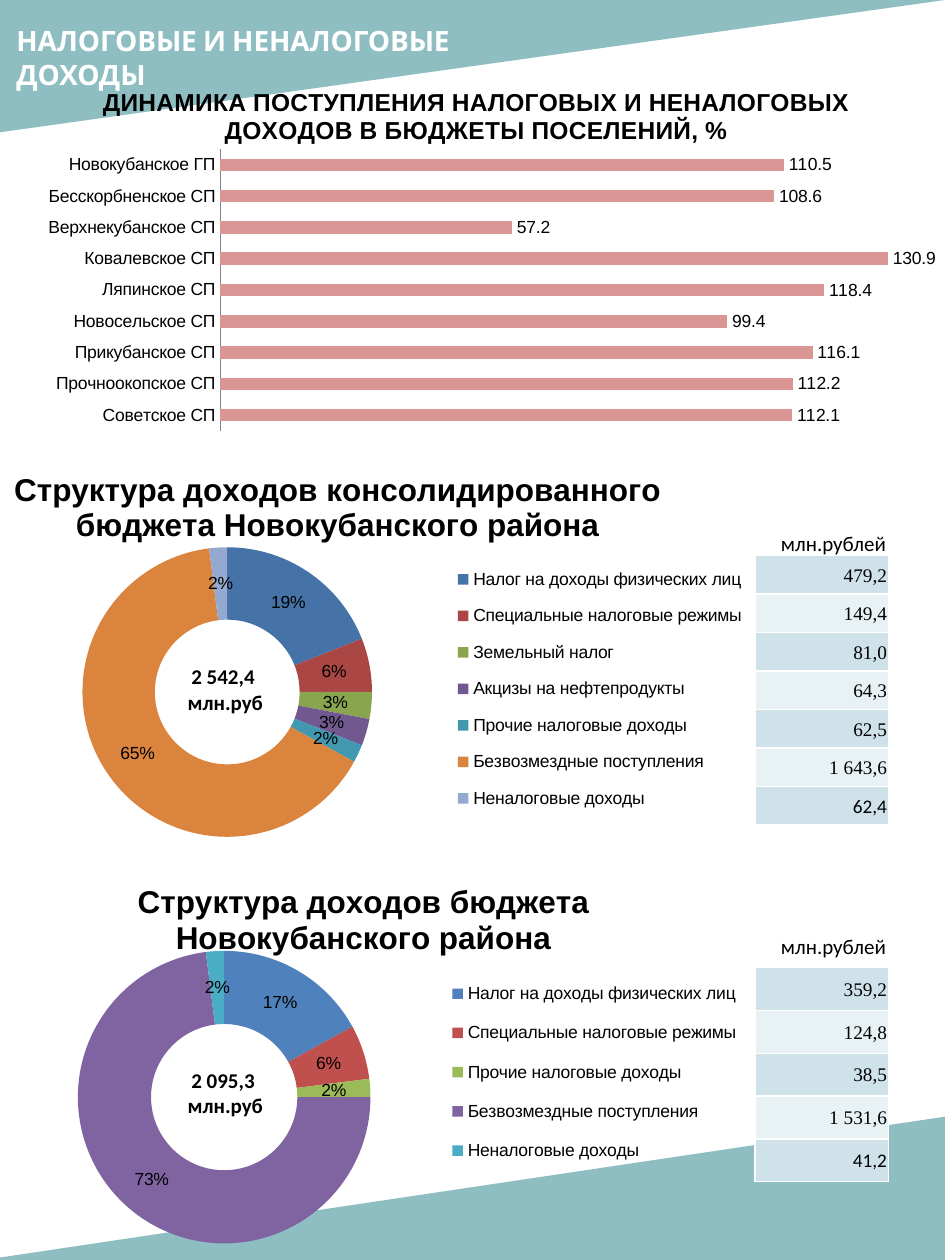
from dataclasses import dataclass

from lxml.etree import SubElement
from pptx import Presentation
from pptx.chart.data import CategoryChartData
from pptx.dml.color import RGBColor
from pptx.enum.chart import XL_CHART_TYPE, XL_LABEL_POSITION, XL_LEGEND_POSITION, XL_TICK_MARK
from pptx.enum.shapes import MSO_SHAPE
from pptx.enum.text import MSO_ANCHOR, MSO_AUTO_SIZE, PP_ALIGN
from pptx.oxml.ns import qn
from pptx.util import Inches, Pt

WIDTH, HEIGHT = Inches(7.5), Inches(10)
COLUMN, ROW = WIDTH / 75, HEIGHT / 100

TEAL = RGBColor(0x51, 0x9A, 0xA0)
WHITE = RGBColor(0xFF, 0xFF, 0xFF)
BLACK = RGBColor(0, 0, 0)
GREY = RGBColor(0x86, 0x86, 0x86)
ROSE = RGBColor(0xD9, 0x96, 0x94)
BANDS = [RGBColor(0xCF, 0xE2, 0xEA), RGBColor(0xE8, 0xF1, 0xF4)]
MUTED = [RGBColor.from_string(code) for code in
         ("4572A7", "AA4643", "89A54E", "71588F", "4198AF", "DB843D", "93A9CF")]
BRIGHT = [RGBColor.from_string(code) for code in
          ("4F81BD", "C0504D", "9BBB59", "8064A2", "4BACC6")]


@dataclass
class Area:
    column: float
    row: float
    columns: float
    rows: float

    def emu(self) -> tuple:
        return (int(self.column * COLUMN), int(self.row * ROW),
                int(self.columns * COLUMN), int(self.rows * ROW))


@dataclass
class Income:
    source: str
    percent: int
    amount: str


@dataclass
class Budget:
    heading: str
    total: str
    incomes: list
    palette: list
    chart: Area
    ring: tuple
    legend: tuple
    total_area: Area
    unit_area: Area
    amounts: Area


SETTLEMENTS = {
    "Новокубанское ГП": 110.5, "Бесскорбненское СП": 108.6, "Верхнекубанское СП": 57.2,
    "Ковалевское СП": 130.9, "Ляпинское СП": 118.4, "Новосельское СП": 99.4,
    "Прикубанское СП": 116.1, "Прочноокопское СП": 112.2, "Советское СП": 112.1,
}

BUDGETS = [
    Budget("Структура доходов консолидированного бюджета Новокубанского района", "2 542,4",
           [Income("Налог на доходы физических лиц", 19, "479,2"),
            Income("Специальные налоговые режимы", 6, "149,4"),
            Income("Земельный налог", 3, "81,0"),
            Income("Акцизы на нефтепродукты", 3, "64,3"),
            Income("Прочие налоговые доходы", 2, "62,5"),
            Income("Безвозмездные поступления", 65, "1 643,6"),
            Income("Неналоговые доходы", 2, "62,4")],
           MUTED, Area(-7.3, 35.6, 68.2, 31.8), (0.203, 0.246, 0.337, 0.724),
           (0.63, 0.26, 0.35, 0.68), Area(13.3, 52.2, 8.8, 5),
           Area(61, 41.6, 12, 3), Area(59.9, 44.1, 10.6, 21.4)),
    Budget("Структура доходов бюджета Новокубанского района", "2 095,3",
           [Income("Налог на доходы физических лиц", 17, "359,2"),
            Income("Специальные налоговые режимы", 6, "124,8"),
            Income("Прочие налоговые доходы", 2, "38,5"),
            Income("Безвозмездные поступления", 73, "1 531,6"),
            Income("Неналоговые доходы", 2, "41,2")],
           BRIGHT, Area(-2.2, 68.3, 62.1, 31.7), (0.135, 0.226, 0.374, 0.733),
           (0.6, 0.26, 0.39, 0.54), Area(13.3, 84.2, 8.8, 5),
           Area(61, 73.6, 12, 3), Area(59.9, 76.8, 10.6, 17)),
]


def style(font, size: float, name: str, color: RGBColor = BLACK, bold: bool = False) -> None:
    font.size, font.name, font.bold = Pt(size), name, bold
    font.color.rgb = color


def draw_corner(slide, area: Area, flip: str) -> None:
    corner = slide.shapes.add_shape(MSO_SHAPE.RIGHT_TRIANGLE, *area.emu())
    corner.rotation = 180
    corner.element.spPr.find(qn("a:xfrm")).set(flip, "1")
    corner.shadow.inherit = False
    corner.fill.solid()
    corner.fill.fore_color.rgb = TEAL
    color = corner.element.spPr.find(qn("a:solidFill"))[0]
    SubElement(color, qn("a:alpha"), val="64000")
    corner.line.fill.background()
    slide.shapes.title.element.addprevious(corner.element)


def draw_text(slide, area: Area, text: str, bold: bool, align: PP_ALIGN) -> None:
    box = slide.shapes.add_textbox(*area.emu())
    box.text_frame.text = text
    box.text_frame.word_wrap = True
    for paragraph in box.text_frame.paragraphs:
        paragraph.alignment = align
        style(paragraph.runs[0].font, 12, "Calibri", bold=bold)


def draw_amounts(slide, area: Area, amounts: list) -> None:
    table = slide.shapes.add_table(len(amounts), 1, *area.emu()).table
    table.first_row = table.horz_banding = False
    for index, amount in enumerate(amounts):
        cell = table.cell(index, 0)
        cell.text = amount
        cell.vertical_anchor = MSO_ANCHOR.MIDDLE
        cell.margin_left = cell.margin_right = cell.margin_top = Inches(0.01)
        cell.margin_bottom = 0
        paragraph = cell.text_frame.paragraphs[0]
        paragraph.alignment = PP_ALIGN.RIGHT
        last = index == len(amounts) - 1
        style(paragraph.runs[0].font, 11, "Calibri" if last else "Times New Roman")
        properties = cell._tc.get_or_add_tcPr()
        for side in ("a:lnL", "a:lnR", "a:lnT", "a:lnB"):
            border = SubElement(properties, qn(side), w=str(Pt(0.96)))
            fill = SubElement(border, qn("a:solidFill"))
            SubElement(fill, qn("a:srgbClr"), val=str(WHITE))
        cell.fill.solid()
        cell.fill.fore_color.rgb = BANDS[index % 2]


def place(parent, shares: tuple, position: int, inner: bool = False) -> None:
    for old in parent.findall(qn("c:layout")):
        parent.remove(old)
    layout = SubElement(parent, qn("c:layout"))
    parent.insert(position, layout)
    manual = SubElement(layout, qn("c:manualLayout"))
    if inner:
        SubElement(manual, qn("c:layoutTarget"), val="inner")
    for mode in ("xMode", "yMode"):
        SubElement(manual, qn("c:" + mode), val="edge")
    for side, share in zip("xywh", shares):
        SubElement(manual, qn("c:" + side), val=str(share))


def draw_chart(slide, kind: XL_CHART_TYPE, area: Area, heading: str, size: float,
               values: dict, ring: tuple, label_format: str):
    data = CategoryChartData()
    data.categories = list(values)
    data.add_series("Series 1", list(values.values()))
    chart = slide.shapes.add_chart(kind, *area.emu(), data).chart
    style(chart.font, 10, "Arial")
    chart.has_title = True
    chart.chart_title.text_frame.text = heading
    style(chart.chart_title.text_frame.paragraphs[0].runs[0].font, size, "Arial", bold=True)
    chart.has_legend = False
    plot = chart.plots[0]
    plot.has_data_labels = True
    labels = plot.data_labels
    labels.number_format, labels.number_format_is_linked = label_format, False
    style(labels.font, 10, "Arial")
    place(chart._chartSpace.chart.plotArea, ring, 0, inner=True)
    return chart


def draw_dynamics(slide) -> None:
    chart = draw_chart(slide, XL_CHART_TYPE.BAR_CLUSTERED, Area(0.3, 5.4, 75, 30),
                       "ДИНАМИКА ПОСТУПЛЕНИЯ НАЛОГОВЫХ И НЕНАЛОГОВЫХ ДОХОДОВ "
                       "В БЮДЖЕТЫ ПОСЕЛЕНИЙ, %",
                       14, SETTLEMENTS, (0.229, 0.215, 0.756, 0.745), "0.0")
    plot = chart.plots[0]
    plot.vary_by_categories = False
    plot.gap_width, plot.overlap = 150, -25
    plot.data_labels.show_value = True
    plot.data_labels.position = XL_LABEL_POSITION.OUTSIDE_END
    plot.series[0].format.fill.solid()
    plot.series[0].format.fill.fore_color.rgb = ROSE
    chart.category_axis.reverse_order = True
    chart.category_axis.major_tick_mark = XL_TICK_MARK.NONE
    chart.category_axis.format.line.color.rgb = GREY
    chart.value_axis.minimum_scale, chart.value_axis.maximum_scale = 0, 140
    chart.value_axis.has_major_gridlines = False
    chart.value_axis.visible = False


def draw_structure(slide, budget: Budget) -> None:
    shares = {income.source: income.percent for income in budget.incomes}
    chart = draw_chart(slide, XL_CHART_TYPE.DOUGHNUT, budget.chart, budget.heading,
                       18, shares, budget.ring, "0%")
    plot = chart.plots[0]
    plot.vary_by_categories = True
    plot.data_labels.show_percentage = True
    plot.data_labels.show_value = False
    for index, color in enumerate(budget.palette):
        sector = plot.series[0].points[index].format.fill
        sector.solid()
        sector.fore_color.rgb = color
    chart.has_legend = True
    chart.legend.position = XL_LEGEND_POSITION.RIGHT
    chart.legend.include_in_layout = False
    style(chart.legend.font, 10, "Arial")
    place(chart.legend._element, budget.legend, 1)


def main() -> None:
    deck = Presentation()
    deck.slide_width, deck.slide_height = WIDTH, HEIGHT
    slide = deck.slides.add_slide(deck.slide_layouts[5])
    title = slide.shapes.title
    title.left, title.top, title.width, title.height = Area(0.3, 1.4, 45.1, 6.3).emu()
    title.text_frame.text = "НАЛОГОВЫЕ И НЕНАЛОГОВЫЕ ДОХОДЫ"
    title.text_frame.auto_size = MSO_AUTO_SIZE.NONE
    title.text_frame.vertical_anchor = MSO_ANCHOR.TOP
    title.text_frame.paragraphs[0].alignment = PP_ALIGN.LEFT
    style(title.text_frame.paragraphs[0].runs[0].font, 16, "Cabin", WHITE, True)
    draw_corner(slide, Area(0, 0, 75, 10.5), "flipH")
    draw_corner(slide, Area(-1.3, 88.6, 76.5, 11.4), "flipV")
    for budget in BUDGETS:
        draw_text(slide, budget.unit_area, "млн.рублей", False, PP_ALIGN.LEFT)
        draw_amounts(slide, budget.amounts, [income.amount for income in budget.incomes])
    draw_dynamics(slide)
    for budget in BUDGETS:
        draw_structure(slide, budget)
        draw_text(slide, budget.total_area, budget.total + "\n млн.руб", True,
                  PP_ALIGN.CENTER)
    deck.save("out.pptx")


if __name__ == "__main__":
    main()
